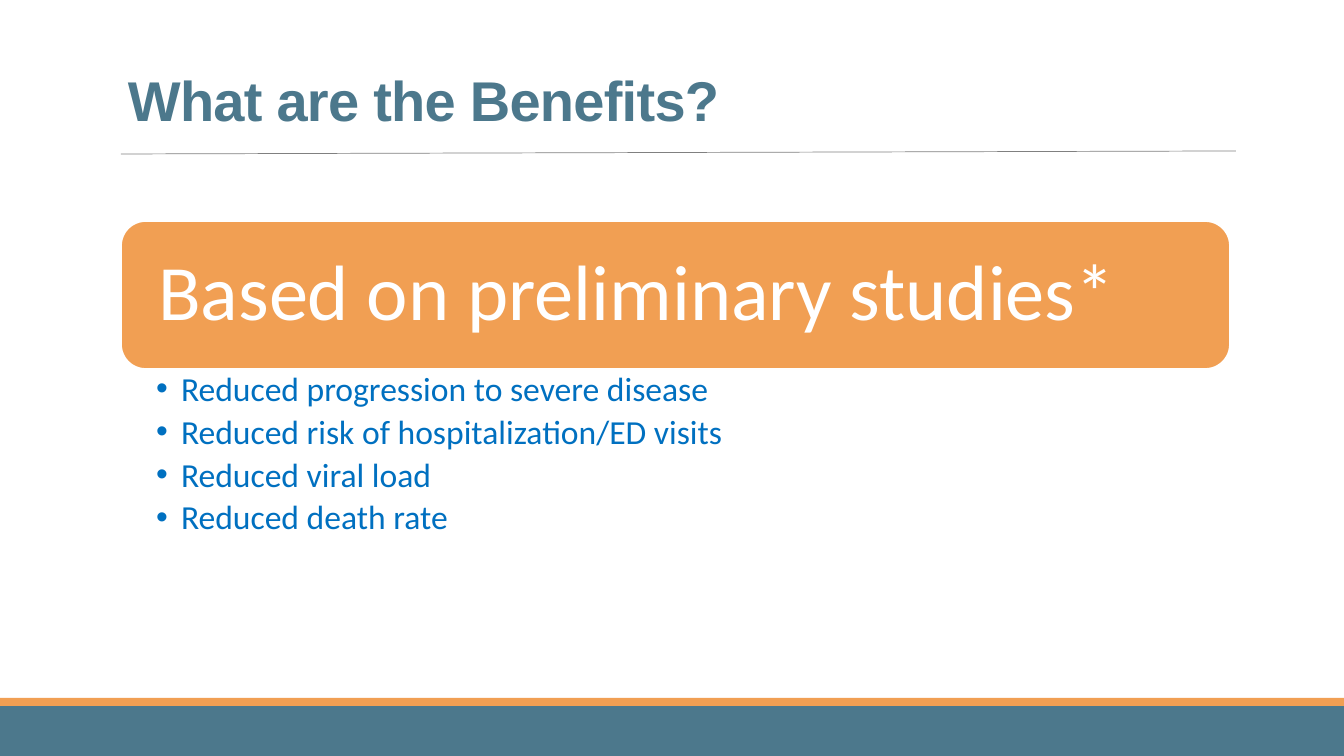
from dataclasses import dataclass

from lxml.etree import SubElement
from pptx import Presentation
from pptx.dml.color import RGBColor
from pptx.enum.shapes import MSO_CONNECTOR, MSO_SHAPE
from pptx.enum.text import MSO_ANCHOR, MSO_AUTO_SIZE, PP_ALIGN
from pptx.oxml.ns import qn
from pptx.util import Pt

WIDE, HIGH = 1344, 756
SCALE = 12192000 / WIDE


@dataclass(frozen=True)
class Theme:
    teal: str = "4C788C"
    orange: str = "F19F53"
    blue: str = "0070C0"
    gray: str = "808080"
    white: str = "FFFFFF"
    head: str = "Arial"
    text: str = "Calibri"
    title: int = 40
    banner: int = 56
    item: int = 24


THEME = Theme()
BENEFITS = [
    "Reduced progression to severe disease",
    "Reduced risk of hospitalization/ED visits",
    "Reduced viral load",
    "Reduced death rate",
]


def px(count):
    return round(count * SCALE)


def rgb(code):
    return RGBColor.from_string(code)


def place(shape, left, top, width, height):
    shape.left, shape.top = px(left), px(top)
    shape.width, shape.height = px(width), px(height)


def set_frame(frame, insets, anchor):
    frame.word_wrap = True
    frame.auto_size = MSO_AUTO_SIZE.NONE
    frame.vertical_anchor = anchor
    (frame.margin_left, frame.margin_top,
     frame.margin_right, frame.margin_bottom) = map(px, insets)


def set_para(para, font, size, color, pitch=0.9, after=0, bold=False):
    para.alignment = PP_ALIGN.LEFT
    para.line_spacing = pitch
    para.space_before, para.space_after = Pt(0), Pt(after)
    for run in para.runs:
        run.font.name, run.font.size = font, Pt(size)
        run.font.bold = bold
        run.font.color.rgb = rgb(color)


def add_box(slide, kind, box, fill, edge=None):
    shape = slide.shapes.add_shape(kind, *map(px, box))
    shape.shadow.inherit = False
    shape.fill.solid()
    shape.fill.fore_color.rgb = rgb(fill)
    if edge:
        shape.line.color.rgb = rgb(edge)
        shape.line.width = Pt(1.25)
    else:
        shape.line.fill.background()
    return shape


def add_rule(slide, start, end):
    rule = slide.shapes.add_connector(
        MSO_CONNECTOR.STRAIGHT, *map(px, start + end))
    rule.line.color.rgb = rgb(THEME.gray)
    rule.line.width = Pt(0.5)
    SubElement(rule.element.spPr, qn("a:effectLst"))


def add_title(slide, text):
    title = slide.shapes.title
    place(title, 118, 41, 1109, 97)
    frame = title.text_frame
    frame.text = text
    set_frame(frame, (10, 5, 10, 5), MSO_ANCHOR.BOTTOM)
    para = frame.paragraphs[0]
    set_para(para, THEME.head, THEME.title, THEME.teal, 0.85, bold=True)
    para.runs[0].font._element.set("spc", "-50")


def add_banner(slide, text):
    shape = add_box(slide, MSO_SHAPE.ROUNDED_RECTANGLE,
                    (121, 221, 1109, 148), THEME.orange, THEME.white)
    frame = shape.text_frame
    frame.text = text
    set_frame(frame, (30, 30, 30, 30), MSO_ANCHOR.MIDDLE)
    set_para(frame.paragraphs[0], THEME.text, THEME.banner, THEME.white)


def add_list(slide, items):
    body = slide.placeholders[1]
    place(body, 121, 369, 1109, 182)
    frame = body.text_frame
    frame.text = "\n".join(items)
    set_frame(frame, (35, 3, 19, 3), MSO_ANCHOR.TOP)
    for para in frame.paragraphs:
        para.level = 1
        set_para(para, THEME.text, THEME.item, THEME.blue,
                 after=THEME.item * 0.2)
        # Hanging bullet
        props = para._p.get_or_add_pPr()
        props.set("marL", str(px(25)))
        props.set("indent", str(-px(25)))
        SubElement(props, qn("a:buFont"), typeface="Arial")
        SubElement(props, qn("a:buChar"), char="•")


def main():
    deck = Presentation()
    deck.slide_width, deck.slide_height = px(WIDE), px(HIGH)
    slide = deck.slides.add_slide(deck.slide_layouts[1])

    # Footer bands and title rule
    add_box(slide, MSO_SHAPE.RECTANGLE, (0, 706, WIDE, 50), THEME.teal)
    add_box(slide, MSO_SHAPE.RECTANGLE, (0, 698, WIDE, 8), THEME.orange)
    add_rule(slide, (121, 154), (1236, 151))

    # Content
    add_title(slide, "What are the Benefits?")
    add_banner(slide, "Based on preliminary studies*")
    add_list(slide, BENEFITS)
    deck.save("out.pptx")


if __name__ == "__main__":
    main()
